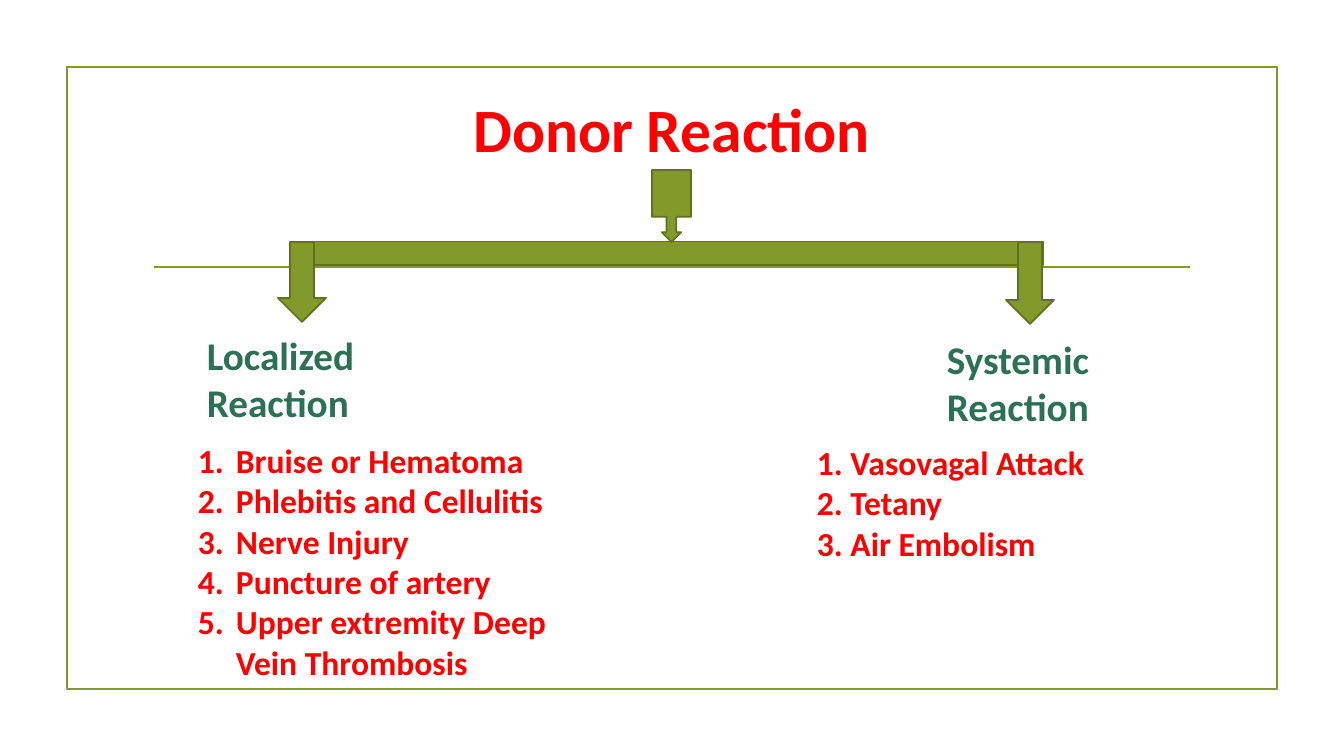
from lxml.etree import SubElement
from pptx import Presentation
from pptx.dml.color import RGBColor
from pptx.enum.shapes import MSO_CONNECTOR, MSO_SHAPE as Shape
from pptx.enum.text import MSO_ANCHOR as Anchor, PP_ALIGN as Align
from pptx.oxml.ns import qn
from pptx.util import Emu, Pt

SCALE = 914400 / 100.8
COLORS = {"olive": "83992A", "outline": "61711F", "red": "FF0000", "green": "2D7154"}


def px(value):
    return Emu(round(value * SCALE))


def color(name):
    return RGBColor.from_string(COLORS[name])


class SlideBuilder:
    font = "Calibri"
    line_width = Pt(1.25)

    def __init__(self, slide):
        self.slide = slide

    def shape(self, kind, box, fill, line):
        shape = self.slide.shapes.add_shape(kind, *map(px, box))
        shape.shadow.inherit = False
        if fill:
            shape.fill.solid()
            shape.fill.fore_color.rgb = color(fill)
        else:
            shape.fill.background()
        shape.line.color.rgb = color(line)
        shape.line.width = self.line_width

    def rule(self, left, right, y):
        rule = self.slide.shapes.add_connector(
            MSO_CONNECTOR.STRAIGHT, px(left), px(y), px(right), px(y))
        rule.line.color.rgb = color("olive")
        rule.line.width = self.line_width
        SubElement(rule._element.spPr, qn("a:effectLst"))

    def text(self, box, lines, size, ink, align=Align.LEFT, anchor=Anchor.TOP, numbered=False):
        frame = self.slide.shapes.add_textbox(*map(px, box)).text_frame
        frame.word_wrap = True
        frame.vertical_anchor = anchor
        for index, line in enumerate(lines):
            paragraph = frame.paragraphs[0] if index == 0 else frame.add_paragraph()
            paragraph.alignment = align
            if numbered:
                self.number(paragraph)
            run = paragraph.add_run()
            run.text = line
            run.font.name = self.font
            run.font.size = Pt(size)
            run.font.bold = True
            run.font.color.rgb = color(ink)

    def number(self, paragraph):
        properties = paragraph._p.get_or_add_pPr()
        indent = px(38)
        properties.set("marL", str(indent))
        properties.set("indent", str(-indent))
        SubElement(properties, qn("a:buFont"), typeface="+mj-lt")
        SubElement(properties, qn("a:buAutoNum"), type="arabicPeriod")


def main():
    deck = Presentation()
    deck.slide_width, deck.slide_height = px(1344), px(756)
    page = SlideBuilder(deck.slides.add_slide(deck.slide_layouts[6]))

    page.shape(Shape.RECTANGLE, (67, 67, 1210, 622), None, "olive")
    page.rule(154, 1190, 267)
    page.text((143, 70, 1058, 115), ["Donor Reaction"], 44, "red", Align.CENTER, Anchor.MIDDLE)

    for kind, box in (
        (Shape.MATH_MINUS, (158, 203, 1020, 101)),
        (Shape.DOWN_ARROW_CALLOUT, (652, 170, 39, 72)),
        (Shape.DOWN_ARROW, (278, 242, 48, 80)),
        (Shape.DOWN_ARROW, (1006, 242, 48, 82)),
    ):
        page.shape(kind, box, "olive", "outline")

    page.text((197, 326, 278, 105), ["Localized Reaction"], 28, "green")
    page.text((937, 330, 238, 105), ["Systemic Reaction"], 28, "green")

    localized = ["Bruise or Hematoma", "Phlebitis and Cellulitis", "Nerve Injury",
                 "Puncture of artery", "Upper extremity Deep Vein Thrombosis"]
    systemic = ["1. Vasovagal Attack", "2. Tetany", "3. Air Embolism"]
    page.text((188, 435, 381, 254), localized, 24, "red", numbered=True)
    page.text((807, 437, 334, 173), systemic, 24, "red")

    deck.save("out.pptx")


if __name__ == "__main__":
    main()
